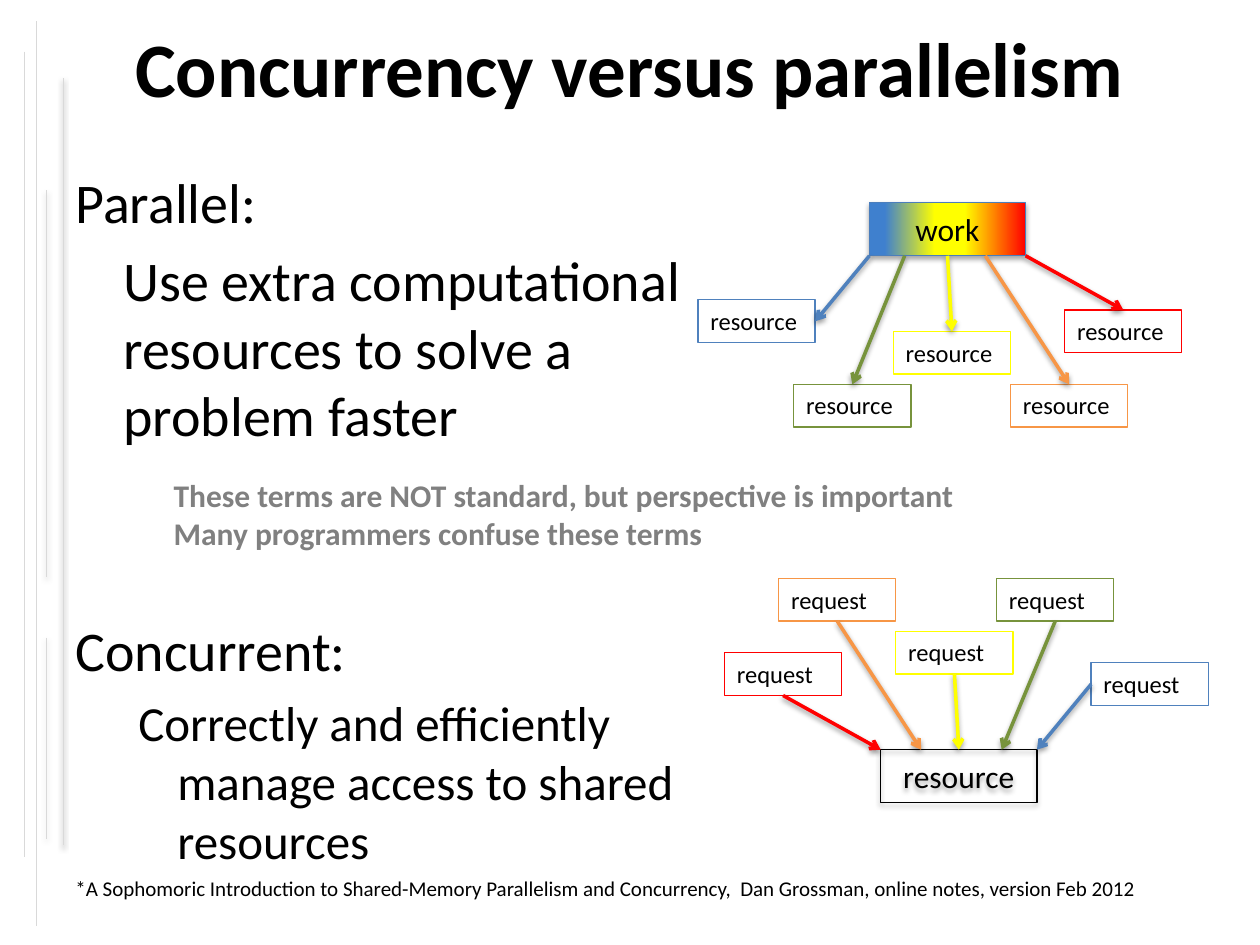
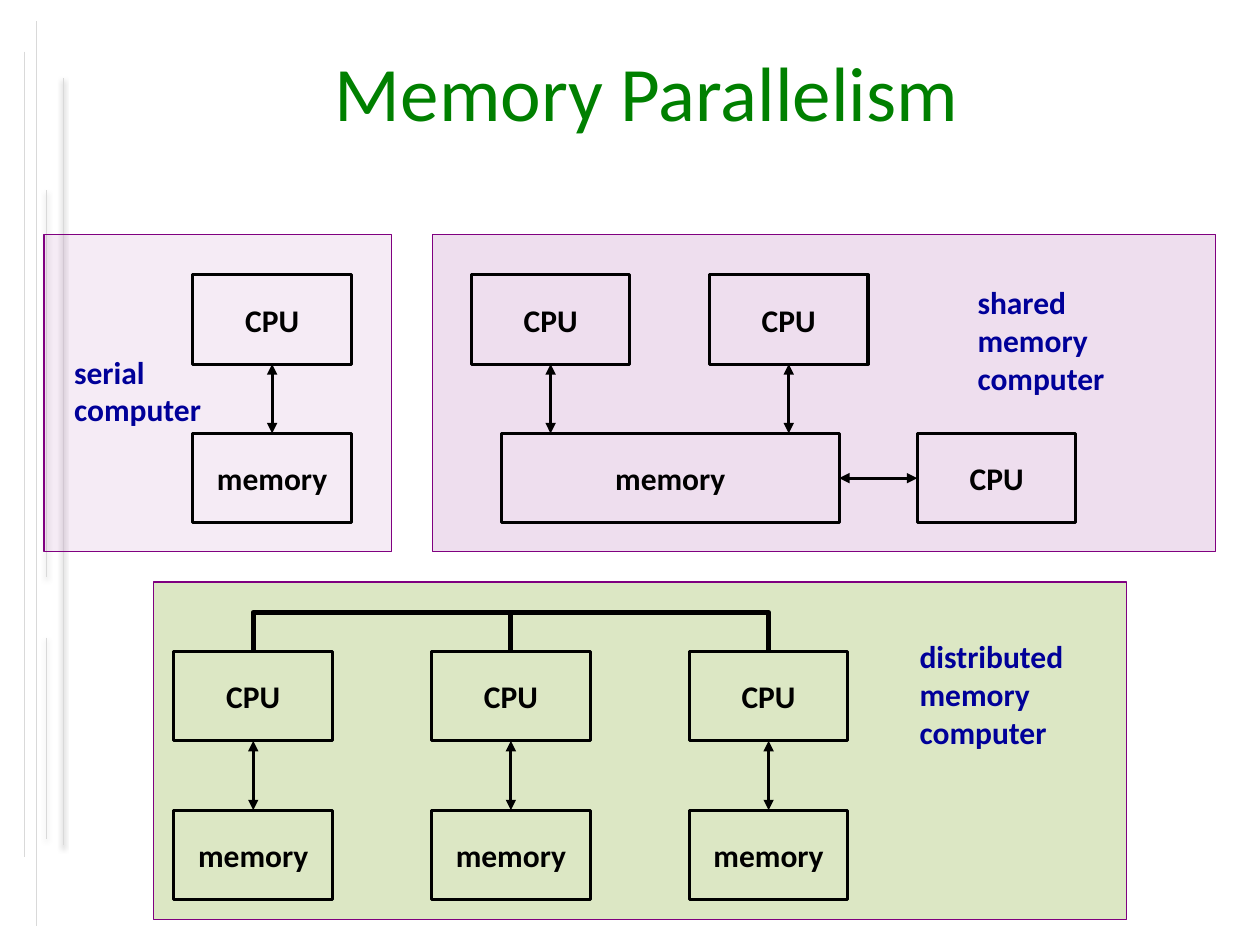
from lxml import etree
from pptx import Presentation, util as u
from pptx.dml.color import RGBColor
from pptx.enum import shapes, text
from pptx.oxml.ns import qn

COLUMNS, ROWS = 100, 75
BLACK, GREY, NAVY, GREEN_TITLE = "000000", "808080", "000099", "008000"
BLUE, GREEN, YELLOW, ORANGE, RED = "4F81BD", "77933C", "FFFF00", "F79646", "FF0000"
PURPLE, OLIVE, RAIL = "800080", "C3D69B", "D9D9D9"
TOP, LEFT, BOTTOM, RIGHT = range(4)
SIDE_RAILS = [(5, 6.2, 67.1), (1.9, 4.1, 68), (3.7, 15.1, 45.8),
              (2.9, 1.7, 73.5), (3.7, 50.6, 66.6)]
CPU_SIZE = (12.6, 7.1)
CPU_TO_MEMORY = 12.6
TAG_SIZE = (9.3, 3.4)


def color(value):
    return RGBColor.from_string(value)


def child(parent, tag, **attributes):
    return etree.SubElement(parent, qn(tag), {k: str(v) for k, v in attributes.items()})


class Deck:
    """Holds the shared style and the slide being drawn."""

    font = "Calibri"

    def __init__(self):
        self.presentation = Presentation()
        self.presentation.slide_width = u.Inches(10)
        self.presentation.slide_height = u.Inches(7.5)
        self.slide = None

    def x(self, columns):
        return round(self.presentation.slide_width * columns / COLUMNS)

    def y(self, rows):
        return round(self.presentation.slide_height * rows / ROWS)

    def area(self, left, top, width, height):
        return self.x(left), self.y(top), self.x(width), self.y(height)

    def start_slide(self, title, at, ink=BLACK, bold=False):
        layout = self.presentation.slide_layouts[5]
        self.slide = self.presentation.slides.add_slide(layout)
        for column, top, bottom in SIDE_RAILS:
            self.line((column, top), (column, bottom), RAIL, 0.25, shadow=38)
        shape = self.slide.shapes.title
        shape.left, shape.top, shape.width, shape.height = self.area(*at)
        self.set_text(shape, title, 44, ink, bold, centered=True, middle=True)

    def set_text(self, shape, words, size, ink=BLACK, bold=False,
                 centered=False, middle=False, wrap=True):
        frame = shape.text_frame
        frame.text = words
        frame.word_wrap = wrap
        frame.vertical_anchor = text.MSO_ANCHOR.MIDDLE if middle else text.MSO_ANCHOR.TOP
        for paragraph in frame.paragraphs:
            paragraph.alignment = text.PP_ALIGN.CENTER if centered else text.PP_ALIGN.LEFT
            self.format_runs(paragraph, size, ink, bold)

    def format_runs(self, paragraph, size, ink, bold=False):
        for run in paragraph.runs:
            run.font.name, run.font.size, run.font.bold = self.font, u.Pt(size), bold
            run.font.color.rgb = color(ink)

    def label(self, words, at, size, ink=BLACK, bold=False, wrap=True):
        shape = self.slide.shapes.add_textbox(*self.area(*at))
        self.set_text(shape, words, size, ink, bold, wrap=wrap)
        return shape

    def outline(self, entries, at):
        """Entries are (words, size, space before, left margin, first-line indent)."""
        shape = self.label("\n".join(entry[0] for entry in entries), at, 32)
        for paragraph, entry in zip(shape.text_frame.paragraphs, entries):
            _, size, space, margin, indent = entry
            self.format_runs(paragraph, size, BLACK)
            paragraph.space_before = u.Pt(space)
            properties = paragraph._p.get_or_add_pPr()
            properties.set("marL", str(self.x(margin)))
            properties.set("indent", str(self.x(indent)))

    def effects(self, shape, shadow, distance=1.6):
        """Replace the theme shadow; shadow is an opacity in percent, 0 for none."""
        effects = child(shape._element.spPr, "a:effectLst")
        if shadow:
            outer = child(effects, "a:outerShdw", blurRad=u.Pt(3.1), dist=u.Pt(distance),
                          dir=5400000, rotWithShape=0)
            child(child(outer, "a:srgbClr", val=BLACK), "a:alpha", val=shadow * 1000)

    def box(self, at, border, width, fill=None, opacity=100, shadow=0):
        shape = self.slide.shapes.add_shape(shapes.MSO_SHAPE.RECTANGLE, *self.area(*at))
        shape.line.color.rgb = color(border)
        shape.line.width = u.Pt(width)
        if fill:
            shape.fill.solid()
            shape.fill.fore_color.rgb = color(fill)
            ink = shape._element.spPr.find(qn("a:solidFill")).find(qn("a:srgbClr"))
            child(ink, "a:alpha", val=opacity * 1000)
        else:
            shape.fill.background()
        self.effects(shape, shadow, 1.8)
        return shape

    def blend(self, shape, stops):
        """Fill from left to right through (percent, colour) stops."""
        shape.fill.gradient()
        shape.fill.gradient_angle = 0
        stop_list = next(shape._element.spPr.iter(qn("a:gsLst")))
        stop_list.clear()
        for percent, value in stops:
            child(child(stop_list, "a:gs", pos=percent * 1000), "a:srgbClr", val=value)

    def text_box(self, words, at, border, width, size, bold=False, shadow=0,
                 boxed=True, wrap=True):
        shape = self.box(at, border, width, shadow=shadow)
        self.set_text(shape, words, size, bold=bold, centered=boxed, middle=boxed, wrap=wrap)
        return shape

    def style_line(self, connector, ink, width, head=None, tail=None, shadow=0):
        connector.line.color.rgb = color(ink)
        connector.line.width = u.Pt(width)
        outline = connector._element.spPr.find(qn("a:ln"))
        for tag, kind in (("a:headEnd", head), ("a:tailEnd", tail)):
            if kind:
                child(outline, tag, type=kind)
        self.effects(connector, shadow)

    def line(self, start, end, ink, width, begin=None, finish=None, **style):
        """Begin and finish are (shape, side) pairs to join."""
        connector = self.slide.shapes.add_connector(
            shapes.MSO_CONNECTOR.STRAIGHT, self.x(start[0]), self.y(start[1]),
            self.x(end[0]), self.y(end[1]))
        if begin:
            connector.begin_connect(*begin)
        if finish:
            connector.end_connect(*finish)
        self.style_line(connector, ink, width, **style)

    def both_ways(self, start, end, begin=None, finish=None):
        self.line(start, end, BLACK, 1.75, begin, finish, head="triangle", tail="triangle")

    def bridge(self, left, right, foot, rise):
        """Elbow line that leaves two feet upwards and runs level between them."""
        middle, half, thin = (left + right) / 2, (right - left) / 2, 0.1
        connector = self.slide.shapes.add_connector(
            shapes.MSO_CONNECTOR.ELBOW, self.x(middle + thin / 2), self.y(foot + half),
            self.x(middle - thin / 2), self.y(foot - half))
        properties = connector._element.spPr
        properties.find(qn("a:xfrm")).set("rot", str(270 * 60000))
        geometry = properties.find(qn("a:prstGeom"))
        for adjustments in geometry.findall(qn("a:avLst")):
            geometry.remove(adjustments)
        child(child(geometry, "a:avLst"), "a:gd", name="adj1",
              fmla=f"val {round(-rise / thin * 100000)}")
        self.style_line(connector, BLACK, 3)

    def unit(self, words, left, top, width=CPU_SIZE[0]):
        return self.text_box(words, (left, top, width, CPU_SIZE[1]), BLACK, 1.75, 18,
                             bold=True, wrap=False)

    def cpu_with_memory(self, left, top):
        cpu = self.unit("CPU", left, top)
        memory = self.unit("memory", left, top + CPU_TO_MEMORY)
        center = left + CPU_SIZE[0] / 2
        self.both_ways((center, top + CPU_SIZE[1]), (center, top + CPU_TO_MEMORY),
                       (cpu, BOTTOM), (memory, TOP))

    def tag(self, words, left, top, ink):
        return self.text_box(words, (left, top, *TAG_SIZE), ink, 0.75, 14, boxed=False)


def concurrency_slide(deck):
    deck.start_slide("Concurrency versus parallelism", (5, 0.3, 90, 10), bold=True)
    deck.outline([
        ("Parallel:", 32, 6.4, 3.8, -3.8),
        ("Use extra computational resources to solve a problem faster", 32, 6.4, 3.8, 0),
        ("Concurrent:", 32, 96, 3.8, -3.8),
        ("Correctly and efficiently manage access to shared resources", 28, 5.6, 8.1, -3.1),
    ], (5, 12.8, 56, 54.2))
    deck.label("*A Sophomoric Introduction to Shared-Memory Parallelism and Concurrency,  "
               "Dan Grossman, online notes, version Feb 2012", (5, 69, 92.6, 3), 12)

    work = deck.text_box("work", (69, 16.1, 12.4, 4.2), "4B7EBC", 0.75, 18, shadow=35)
    deck.blend(work, [(10, "3F80CE"), (42, YELLOW), (61, YELLOW), (100, RED)])
    # colour, tag left, tag top, arrow start column, joined side
    for ink, left, top, start, side in [
            (BLUE, 55.4, 23.8, 69, RIGHT), (GREEN, 63, 30.5, 71.8, TOP),
            (YELLOW, 70.9, 26.3, 75.2, TOP), (ORANGE, 80.2, 30.5, 78.2, TOP),
            (RED, 84.5, 24.6, 81.4, TOP)]:
        tag = deck.tag("resource", left, top, ink)
        deck.line((start, 20.3), (left, top), ink, 2, finish=(tag, side),
                  tail="arrow", shadow=38)

    deck.text_box("resource", (69.9, 59.5, 12.4, 4.2), BLACK, 0.75, 18, shadow=35)
    # colour, tag left, tag top, arrow end column, joined side
    for ink, left, top, end, side in [
            (BLUE, 86.6, 52.6, 82.3, LEFT), (GREEN, 79.1, 45.9, 79.5, BOTTOM),
            (YELLOW, 71.1, 50.1, 76.1, BOTTOM), (ORANGE, 61.8, 45.9, 73.1, BOTTOM),
            (RED, 57.5, 51.8, 69.9, BOTTOM)]:
        tag = deck.tag("request", left, top, ink)
        deck.line((left, top), (end, 59.5), ink, 2, begin=(tag, side),
                  tail="arrow", shadow=38)

    deck.label("These terms are NOT standard, but perspective is important\n"
               "Many programmers confuse these terms", (12.8, 37.3, 65.3, 7.1), 18, GREY, True)


def memory_slide(deck):
    deck.start_slide("Memory Parallelism", (10.1, 2.7, 82.5, 9), GREEN_TITLE)
    for at, fill, opacity in [((12.2, 46.2, 77.2, 26.8), OLIVE, 58),
                              ((34.3, 18.6, 62.2, 25.2), PURPLE, 13),
                              ((3.5, 18.6, 27.6, 25.2), PURPLE, 8)]:
        deck.box(at, PURPLE, 0, fill, opacity)

    upper, lower = 21.8, 21.8 + CPU_TO_MEMORY
    deck.cpu_with_memory(15.3, upper)

    shared_memory = deck.unit("memory", 39.8, lower, 26.8)
    side_cpu = deck.unit("CPU", 72.8, lower)
    deck.both_ways((72.8, 37.9), (66.6, 37.9), (side_cpu, LEFT), (shared_memory, RIGHT))
    for left in (37.4, 56.3):
        cpu = deck.unit("CPU", left, upper)
        center = left + CPU_SIZE[0] / 2
        deck.both_ways((center, upper + CPU_SIZE[1]), (center, lower), (cpu, BOTTOM))

    first, step, node_top = 13.8, 20.45, 51.7
    lefts = [first + step * index for index in range(3)]
    for left in lefts:
        deck.cpu_with_memory(left, node_top)
    centers = [left + CPU_SIZE[0] / 2 for left in lefts]
    for left, right in zip(centers, centers[1:]):
        deck.bridge(left, right, node_top - 0.1, 3)

    deck.label("serial\ncomputer", (4.9, 27.5, 13.4, 7), 18, NAVY, True, wrap=False)
    deck.label("shared memory computer", (76.6, 22, 15.2, 10), 18, NAVY, True)
    deck.label("distributed memory computer", (72, 50.1, 15.2, 10), 18, NAVY, True)


def main():
    deck = Deck()
    concurrency_slide(deck)
    memory_slide(deck)
    deck.presentation.save("out.pptx")


if __name__ == "__main__":
    main()
